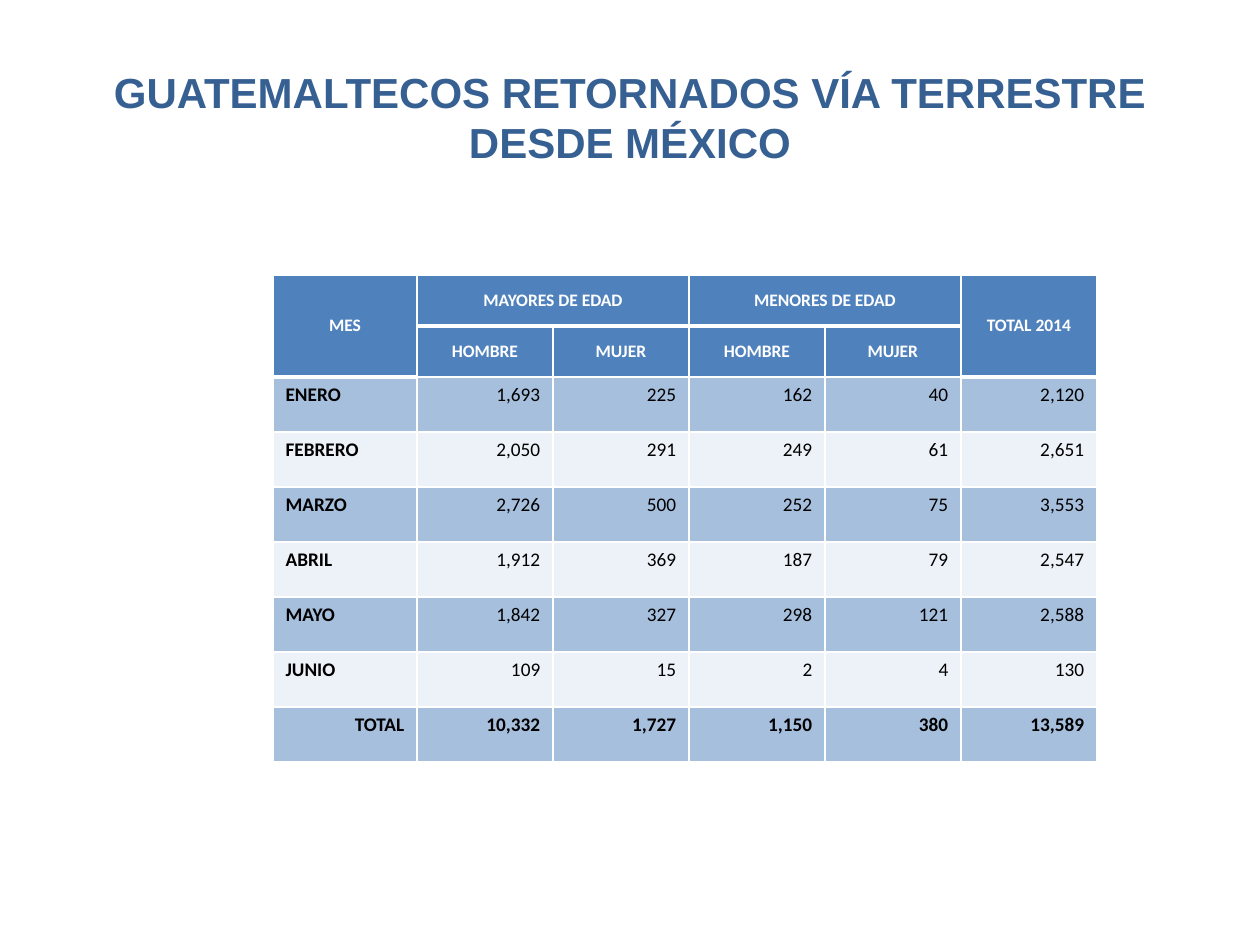
from lxml import etree
from pptx import Presentation
from pptx.dml.color import RGBColor
from pptx.enum.text import MSO_ANCHOR, PP_ALIGN
from pptx.oxml.ns import qn
from pptx.util import Pt

PX = 914400 // 126
LEFT, CENTER, RIGHT = PP_ALIGN.LEFT, PP_ALIGN.CENTER, PP_ALIGN.RIGHT
TOP, MIDDLE = MSO_ANCHOR.TOP, MSO_ANCHOR.MIDDLE

NAVY = RGBColor(0x37, 0x60, 0x92)
BLUE = RGBColor(0x4F, 0x81, 0xBD)
PALE = RGBColor(0xDC, 0xE6, 0xF2)
WHITE = RGBColor(0xFF, 0xFF, 0xFF)
BLACK = RGBColor(0, 0, 0)

TITLE = "GUATEMALTECOS RETORNADOS VÍA TERRESTRE DESDE MÉXICO"
ROWS = [
    ["MES", "MAYORES DE EDAD", "", "MENORES DE EDAD", "", "TOTAL 2014"],
    ["", "HOMBRE", "MUJER", "HOMBRE", "MUJER", ""],
    ["ENERO", "1,693", "225", "162", "40", "2,120"],
    ["FEBRERO", "2,050", "291", "249", "61", "2,651"],
    ["MARZO", "2,726", "500", "252", "75", "3,553"],
    ["ABRIL", "1,912", "369", "187", "79", "2,547"],
    ["MAYO", "1,842", "327", "298", "121", "2,588"],
    ["JUNIO", "109", "15", "2", "4", "130"],
    ["TOTAL", "10,332", "1,727", "1,150", "380", "13,589"],
]
HEADER_ROWS = 2
LAST_ROW, LAST_COL = len(ROWS) - 1, len(ROWS[0]) - 1
MERGES = [((0, 0), (1, 0)), ((0, 1), (0, 2)), ((0, 3), (0, 4)),
          ((0, LAST_COL), (1, LAST_COL))]
COL_WIDTHS = [144] + [136] * LAST_COL
ROW_HEIGHTS = [51] * HEADER_ROWS + [55] * (len(ROWS) - HEADER_ROWS)


def write(tf, text, align, **font):
    p = tf.paragraphs[0]
    p.alignment = align
    r = p.add_run()
    r.text = text
    r.font.fill.solid()
    r.font.fill.fore_color.rgb = font.pop("color")
    for name, value in font.items():
        setattr(r.font, name, value)


def bottom_width(row, col):
    """Line width in points; the header groups end in a heavy line."""
    heavy = row == 0 or (row == 1 and col in (0, LAST_COL))
    return 3 if heavy else 1


def set_borders(cell, **widths):
    tc_pr = cell._tc.get_or_add_tcPr()
    for side, width in widths.items():
        ln = etree.SubElement(tc_pr, qn(f"a:ln{side}"), w=str(Pt(width)))
        fill = etree.SubElement(ln, qn("a:solidFill"))
        etree.SubElement(fill, qn("a:srgbClr"), val=str(WHITE))


def set_fill(cell, color, opacity):
    cell.fill.solid()
    cell.fill.fore_color.rgb = color
    if opacity < 100:
        clr = cell._tc.tcPr.find(qn("a:solidFill")).find(qn("a:srgbClr"))
        etree.SubElement(clr, qn("a:alpha"), val=str(opacity * 1000))


def format_cell(cell, row, col, text):
    header = row < HEADER_ROWS
    set_borders(cell, L=1, R=1, T=bottom_width(row - 1, col), B=bottom_width(row, col))
    set_fill(cell, BLUE if header or row % 2 == 0 else PALE, 100 if header else 50)
    cell.vertical_anchor = MIDDLE if header else TOP
    if not text:
        return
    if header:
        align = CENTER
    else:
        align = LEFT if col == 0 and row < LAST_ROW else RIGHT
    write(cell.text_frame, text, align, name="Calibri",
          size=Pt(10 if header else 11), color=WHITE if header else BLACK,
          bold=header or col == 0 or row == LAST_ROW)


def add_title(s, x, y, w, h):
    title = s.shapes.title
    box = {"left": x, "top": y, "width": w, "height": h}
    for name, value in box.items():
        setattr(title, name, value * PX)
    title.text_frame.vertical_anchor = MIDDLE
    write(title.text_frame, TITLE, CENTER, name="Arial", size=Pt(24), bold=True, color=NAVY)


def add_returns_table(s, x, y):
    frame = s.shapes.add_table(len(ROWS), len(COL_WIDTHS), x * PX, y * PX,
                               sum(COL_WIDTHS) * PX, sum(ROW_HEIGHTS) * PX)
    table = frame.table
    for column, width in zip(table.columns, COL_WIDTHS):
        column.width = width * PX
    for row, height in zip(table.rows, ROW_HEIGHTS):
        row.height = height * PX
    for first, last in MERGES:
        table.cell(*first).merge(table.cell(*last))
    for row, texts in enumerate(ROWS):
        for col, text in enumerate(texts):
            format_cell(table.cell(row, col), row, col, text)


def main():
    prs = Presentation()
    prs.slide_width, prs.slide_height = 1260 * PX, 945 * PX
    s = prs.slides.add_slide(prs.slide_layouts.get_by_name("Title Only"))
    add_title(s, 63, 38, 1134, 157)
    add_returns_table(s, 273, 275)
    prs.save("out.pptx")


if __name__ == "__main__":
    main()
